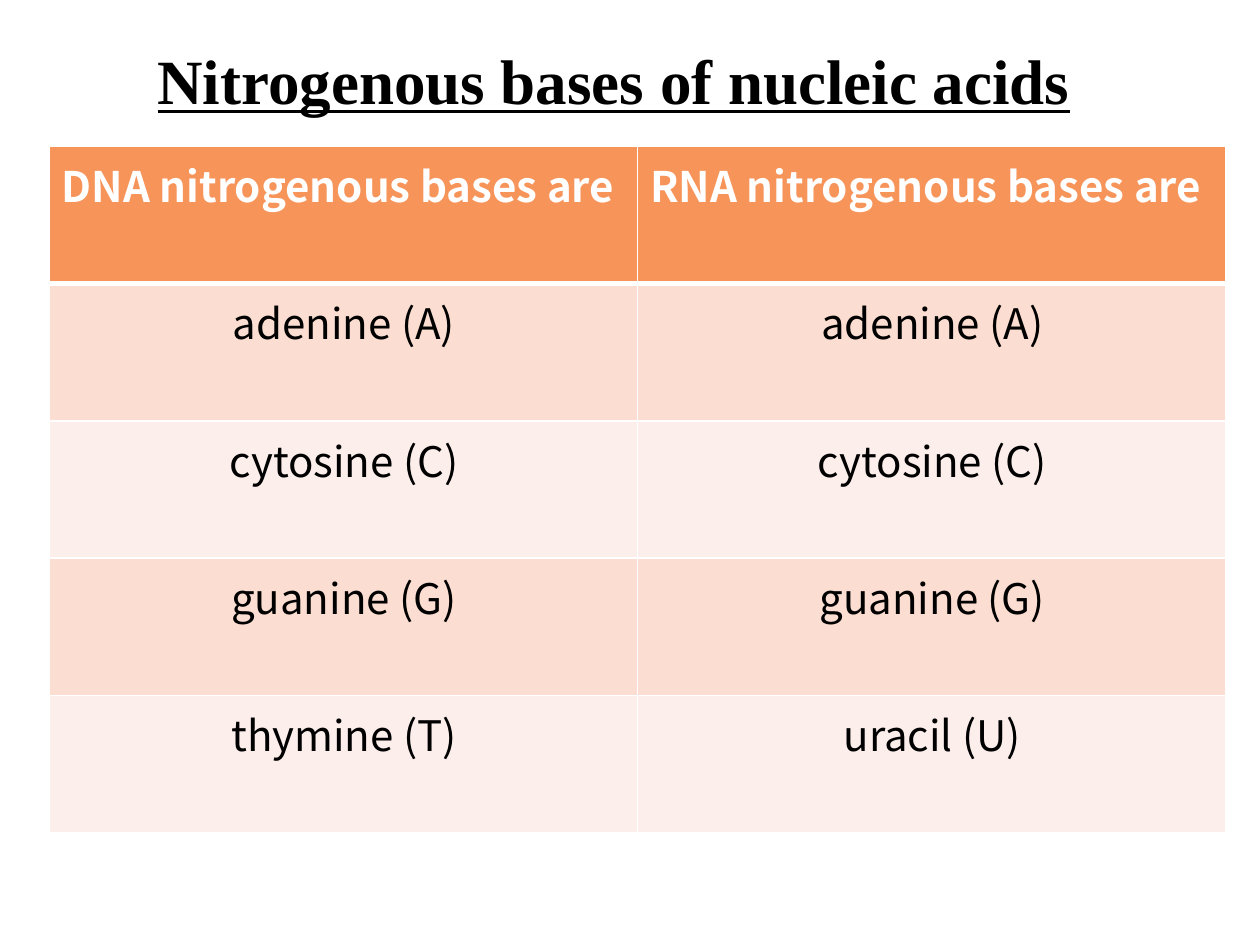
"""Build a slide with a table comparing the nitrogenous bases of DNA and RNA."""
from lxml.etree import SubElement
from pptx import Presentation
from pptx.dml.color import RGBColor
from pptx.enum.text import MSO_ANCHOR as Anchor, MSO_AUTO_SIZE as AutoSize, PP_ALIGN as Align
from pptx.oxml.ns import qn
from pptx.util import Inches, Pt

COLORS = {"white": "FFFFFF", "black": "000000", "header": "F7945A",
          "odd": "FBDDD1", "even": "FCEEEA"}
ROWS = [
    ("DNA nitrogenous bases are", "RNA nitrogenous bases are"),
    ("adenine (A)", "adenine (A)"),
    ("cytosine (C)", "cytosine (C)"),
    ("guanine (G)", "guanine (G)"),
    ("thymine (T)", "uracil (U)"),
]
COL_WIDTH, ROW_HEIGHT = 4.67, 1.09


def write(frame, text, *, font, size, color, bold=False, underline=False, align=Align.LEFT):
    para = frame.paragraphs[0]
    para.alignment = align
    para.space_before = Pt(0)
    span = para.add_run()
    span.text = text
    span.font.name, span.font.size = font, Pt(size)
    span.font.bold, span.font.underline = bold, underline
    span.font.color.rgb = RGBColor.from_string(COLORS[color])


def add_border(cell, side, width):
    line = SubElement(cell._tc.get_or_add_tcPr(), qn(f"a:ln{side}"), w=str(Pt(width)))
    fill = SubElement(line, qn("a:solidFill"))
    SubElement(fill, qn("a:srgbClr"), val=COLORS["white"])


deck = Presentation()
deck.slide_width, deck.slide_height = Inches(10), Inches(7.5)
page = deck.slides.add_slide(deck.slide_layouts[5])

title = page.shapes.title
title.left, title.top, title.width, title.height = map(Inches, (1.24, 0.3, 7.3, 0.63))
frame = title.text_frame
frame.word_wrap = True
frame.auto_size = AutoSize.NONE
frame.vertical_anchor = Anchor.BOTTOM
frame.margin_left, frame.margin_top = Inches(0.01), Inches(0.01)
frame.margin_right = frame.margin_bottom = 0
write(frame, "Nitrogenous bases of nucleic acids", font="Times New Roman", size=36,
      color="black", bold=True, underline=True)

table = page.shapes.add_table(
    len(ROWS), 2, Inches(0.39), Inches(1.16),
    Inches(2 * COL_WIDTH), Inches(len(ROWS) * ROW_HEIGHT)).table
for column in table.columns:
    column.width = Inches(COL_WIDTH)

for row, names in enumerate(ROWS):
    table.rows[row].height = Inches(ROW_HEIGHT)
    header = row == 0
    shade = "header" if header else "odd" if row % 2 else "even"
    for col, name in enumerate(names):
        cell = table.cell(row, col)
        cell.margin_left = Inches(0.1 if header else 0.01)
        cell.margin_top = Inches(0.06)
        cell.margin_right = cell.margin_bottom = 0
        widths = {"L": 1, "R": 1, "T": 3 if row == 1 else 1, "B": 3 if header else 1}
        for side, width in widths.items():
            add_border(cell, side, width)
        cell.fill.solid()
        cell.fill.fore_color.rgb = RGBColor.from_string(COLORS[shade])
        write(cell.text_frame, name, font="Noto Sans CJK JP", size=24, bold=header,
              color="white" if header else "black",
              align=Align.LEFT if header else Align.CENTER)

deck.save("out.pptx")
